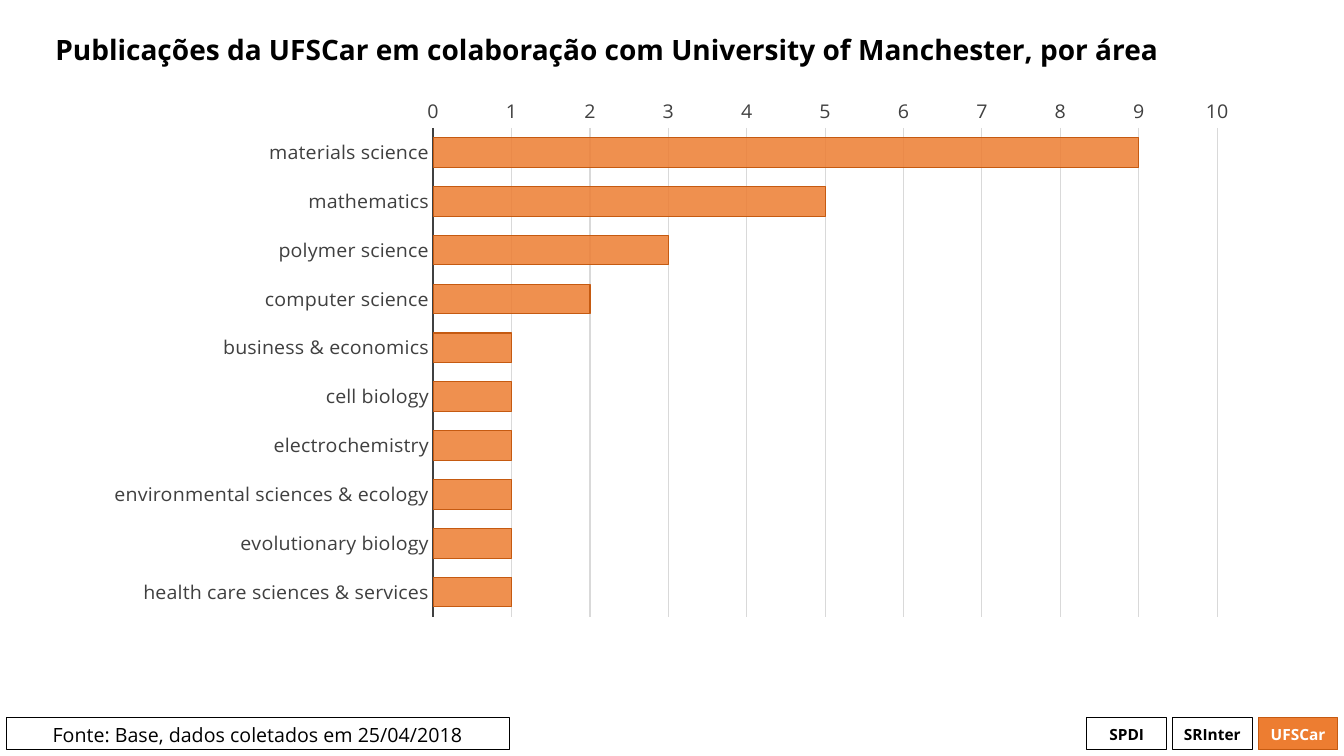
from lxml import etree
from pptx import Presentation, util as u
from pptx.chart.data import CategoryChartData
from pptx.dml.color import RGBColor
from pptx.enum import chart as ch, shapes, text
from pptx.oxml import parse_xml
from pptx.oxml.ns import nsdecls, qn

TITLE = "Publicações da UFSCar em colaboração com University of Manchester, por área"
SOURCE = "Fonte: Base, dados coletados em 25/04/2018"
BADGES = [("SPDI", False), ("SRInter", False), ("UFSCar", True)]
AREAS = {
    "materials science": 9,
    "mathematics": 5,
    "polymer science": 3,
    "computer science": 2,
    "business & economics": 1,
    "cell biology": 1,
    "electrochemistry": 1,
    "environmental sciences & ecology": 1,
    "evolutionary biology": 1,
    "health care sciences & services": 1,
}
THEME = dict(font="Open Sans", ink="000000", white="FFFFFF", accent="ED7D31",
             edge="C55A11", axis="404040", grid="D9D9D9",
             title=20, body=14, badge=11, thin=0.75, thick=1.5, alpha=85)
CHART = (0.91, 0.97, 11.52, 5.62)
PLOT = (4.3, 1.08, 7.78, 5.02)
FOOT_Y, FOOT_H = 7.12, 0.32
BADGE_X, BADGE_W, BADGE_STEP = 10.78, 0.79, 0.85


def rgb(name):
    return RGBColor.from_string(THEME[name])


def style_font(font, size, color="ink", bold=False):
    font.name = THEME["font"]
    font.size = u.Pt(THEME[size])
    font.bold = bold
    font.color.rgb = rgb(color)


def style_line(line, color, width="thin"):
    line.color.rgb = rgb(color)
    line.width = u.Pt(THEME[width])


def write(sp, words, size="body", color="ink", bold=False, align="CENTER",
          anchor="MIDDLE", spacing=None):
    tf = sp.text_frame
    tf.word_wrap = True
    tf.vertical_anchor = getattr(text.MSO_ANCHOR, anchor)
    p = tf.paragraphs[0]
    p.alignment = getattr(text.PP_ALIGN, align)
    p.line_spacing = spacing
    r = p.add_run()
    r.text = words
    style_font(r.font, size, color, bold)


def add_box(s, x, width, filled=False):
    sp = s.shapes.add_shape(shapes.MSO_SHAPE.RECTANGLE, *map(u.Inches, (x, FOOT_Y, width, FOOT_H)))
    sp.shadow.inherit = False
    if filled:
        sp.fill.solid()
        sp.fill.fore_color.rgb = rgb("accent")
    else:
        sp.fill.background()
    style_line(sp.line, "edge" if filled else "ink")
    return sp


def set_plot_area(chart):
    x, y = ((PLOT[i] - CHART[i]) / CHART[i + 2] for i in (0, 1))
    w, h = (PLOT[i] / CHART[i] for i in (2, 3))
    area = chart._chartSpace.chart.plotArea
    for old in area.findall(qn("c:layout")):
        area.remove(old)
    area.insert(0, parse_xml(
        f'<c:layout {nsdecls("c")}><c:manualLayout><c:layoutTarget val="inner"/>'
        f'<c:xMode val="edge"/><c:yMode val="edge"/><c:x val="{x:.3f}"/><c:y val="{y:.3f}"/>'
        f'<c:w val="{w:.3f}"/><c:h val="{h:.3f}"/></c:manualLayout></c:layout>'))


def add_areas_chart(s):
    data = CategoryChartData()
    data.categories = list(AREAS)
    data.add_series("Series 1", list(AREAS.values()))
    chart = s.shapes.add_chart(ch.XL_CHART_TYPE.BAR_CLUSTERED, *map(u.Inches, CHART), data).chart
    chart.has_legend = chart.has_title = False
    style_font(chart.font, "body")
    cat, val = chart.category_axis, chart.value_axis
    for axis in (cat, val):
        axis.major_tick_mark = axis.minor_tick_mark = ch.XL_TICK_MARK.NONE
        style_font(axis.tick_labels.font, "body", "axis")
    cat.reverse_order = True
    cat.crosses = ch.XL_AXIS_CROSSES.MAXIMUM
    style_line(cat.format.line, "axis", "thick")
    val.minimum_scale, val.maximum_scale, val.major_unit = 0, 10, 1
    val.format.line.fill.background()
    style_line(val.major_gridlines.format.line, "grid")
    plot = chart.plots[0]
    plot.gap_width = 65
    plot.vary_by_categories = False
    bars = plot.series[0].format
    bars.fill.solid()
    bars.fill.fore_color.rgb = rgb("accent")
    style_line(bars.line, "edge")
    color = plot.series[0]._element.find(".//" + qn("a:solidFill")).find(qn("a:srgbClr"))
    etree.SubElement(color, qn("a:alpha")).set("val", str(THEME["alpha"] * 1000))
    set_plot_area(chart)


def main():
    prs = Presentation()
    prs.slide_width, prs.slide_height = u.Inches(13.33), u.Inches(7.5)
    s = prs.slides.add_slide(prs.slide_layouts[6])
    for i, (name, filled) in enumerate(BADGES):
        sp = add_box(s, BADGE_X + i * BADGE_STEP, BADGE_W, filled)
        write(sp, name, size="badge", color="white" if filled else "ink", bold=True)
    write(add_box(s, 0.06, 4.99), SOURCE, anchor="TOP")
    title = s.shapes.add_textbox(*map(u.Inches, (0.45, 0.06, 12.41, 0.91)))
    write(title, TITLE, size="title", bold=True, align="LEFT", spacing=0.9)
    add_areas_chart(s)
    prs.save("out.pptx")


if __name__ == "__main__":
    main()
